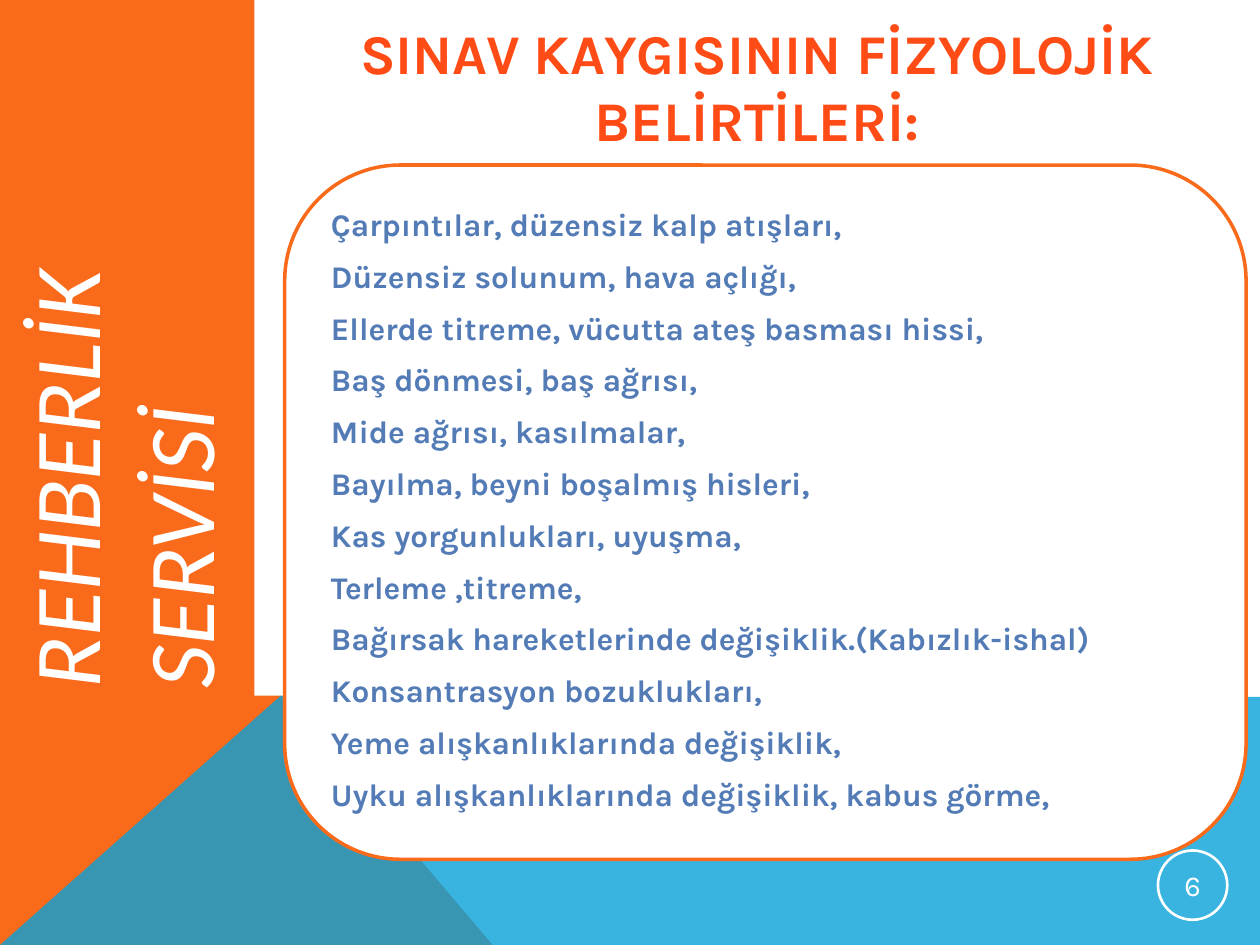
from dataclasses import dataclass

from pptx import Presentation
from pptx.dml.color import RGBColor
from pptx.enum.shapes import MSO_SHAPE as Preset
from pptx.enum.text import MSO_ANCHOR as Anchor, MSO_AUTO_SIZE as AutoSize, PP_ALIGN as Align
from pptx.oxml.ns import qn
from pptx.util import Inches, Pt
from lxml.etree import SubElement

COLUMNS, ROWS = 100, 75
SLIDE_WIDTH, SLIDE_HEIGHT = Inches(10), Inches(7.5)

TITLE = "SINAV KAYGISININ FİZYOLOJİK BELİRTİLERİ:"
SYMPTOMS = [
    "Çarpıntılar, düzensiz kalp atışları,",
    "Düzensiz solunum, hava açlığı,",
    "Ellerde titreme, vücutta ateş basması hissi,",
    "Baş dönmesi, baş ağrısı,",
    "Mide ağrısı, kasılmalar,",
    "Bayılma, beyni boşalmış hisleri,",
    "Kas yorgunlukları, uyuşma,",
    "Terleme ,titreme,",
    "Bağırsak hareketlerinde değişiklik.(Kabızlık-ishal)",
    "Konsantrasyon bozuklukları,",
    "Yeme alışkanlıklarında değişiklik,",
    "Uyku alışkanlıklarında değişiklik, kabus görme,",
]


@dataclass(frozen=True)
class Theme:
    font: str = "Karla"
    banner_font: str = "Calibri"
    orange: str = "F96A1B"
    blue: str = "08A1D9"
    white: str = "FFFFFF"
    title_color: str = "FF4C16"
    body_color: str = "537BB6"
    title_size: float = 32
    body_size: float = 18
    number_size: float = 16.5
    banner_size: float = 54


THEME = Theme()


def x(column):
    return round(SLIDE_WIDTH * column / COLUMNS)


def y(row):
    return round(SLIDE_HEIGHT * row / ROWS)


def box(left, top, width, height):
    return x(left), y(top), x(width), y(height)


def paint(shape, fill=None, line=None, line_width=1):
    shape.shadow.inherit = False
    if fill:
        shape.fill.solid()
        shape.fill.fore_color.rgb = RGBColor.from_string(fill)
    else:
        shape.fill.background()
    if line:
        shape.line.color.rgb = RGBColor.from_string(line)
        shape.line.width = Pt(line_width)
    else:
        shape.line.fill.background()


def write(shape, lines, size, color, font=THEME.font, align=Align.LEFT,
          anchor=Anchor.TOP, bold=False, italic=False):
    frame = shape.text_frame
    frame.text = "\n".join(lines)
    frame.word_wrap = True
    frame.auto_size = AutoSize.NONE
    frame.vertical_anchor = anchor
    for paragraph in frame.paragraphs:
        paragraph.alignment = align
        for run in paragraph.runs:
            run.font.name = font
            run.font.size = Pt(size)
            run.font.bold = bold
            run.font.italic = italic
            run.font.color.rgb = RGBColor.from_string(color)


def add_preset(slide, preset, area, **style):
    shape = slide.shapes.add_shape(preset, *box(*area))
    paint(shape, **style)
    return shape


def add_polygon(slide, points, fill, opacity=100):
    start, *others = [(x(column), y(row)) for column, row in points]
    builder = slide.shapes.build_freeform(*start, scale=1.0)
    builder.add_line_segments(others, close=True)
    shape = builder.convert_to_shape()
    paint(shape, fill=fill)
    if opacity < 100:
        color = shape.fill._xPr.find(qn("a:solidFill"))[0]
        SubElement(color, qn("a:alpha"), val=str(opacity * 1000))


def add_footer(slide):
    corner, peak = (0, ROWS), (22.3, 55.2)
    add_polygon(slide, [corner, (0, 55.2), peak, (39.1, ROWS)], THEME.orange)
    add_polygon(slide, [corner, peak, (COLUMNS, 55.3), (COLUMNS, ROWS)], THEME.blue, opacity=80)


def add_title(slide):
    title = slide.shapes.title
    title.left, title.top, title.width, title.height = box(20.2, 1.3, 79.8, 11)
    write(title, [TITLE], THEME.title_size, THEME.title_color,
          align=Align.CENTER, anchor=Anchor.MIDDLE, bold=True)


def add_symptoms(slide):
    panel = add_preset(slide, Preset.ROUNDED_RECTANGLE, (22.6, 13.1, 76.3, 55.1),
                       fill=THEME.white, line=THEME.orange, line_width=2)
    write(panel, SYMPTOMS, THEME.body_size, THEME.body_color, bold=True)
    for paragraph in panel.text_frame.paragraphs:
        paragraph.space_before = Pt(8)
        properties = paragraph._p.get_or_add_pPr()
        properties.set("marL", str(x(3.8)))
        properties.set("indent", str(-x(3.8)))


def add_page_number(slide, number):
    badge = add_preset(slide, Preset.OVAL, (91.9, 67.5, 5.5, 5.5),
                       line=THEME.white, line_width=1.5)
    write(badge, [str(number)], THEME.number_size, THEME.white,
          align=Align.CENTER, anchor=Anchor.MIDDLE)
    frame = badge.text_frame
    frame.margin_left = frame.margin_right = x(0.1)
    frame.margin_top = frame.margin_bottom = y(0.1)


def add_banner(slide):
    banner = add_preset(slide, Preset.RECTANGLE, (0, 0, 20.2, 55.6), fill=THEME.orange)
    write(banner, ["REHBERLİK SERVİSİ"], THEME.banner_size, THEME.white,
          font=THEME.banner_font, italic=True)
    banner.text_frame._txBody.bodyPr.set("vert", "vert270")


def main():
    presentation = Presentation()
    presentation.slide_width, presentation.slide_height = SLIDE_WIDTH, SLIDE_HEIGHT
    slide = presentation.slides.add_slide(presentation.slide_layouts[5])
    add_footer(slide)
    add_title(slide)
    add_symptoms(slide)
    add_page_number(slide, 6)
    add_banner(slide)
    presentation.save("out.pptx")


if __name__ == "__main__":
    main()
